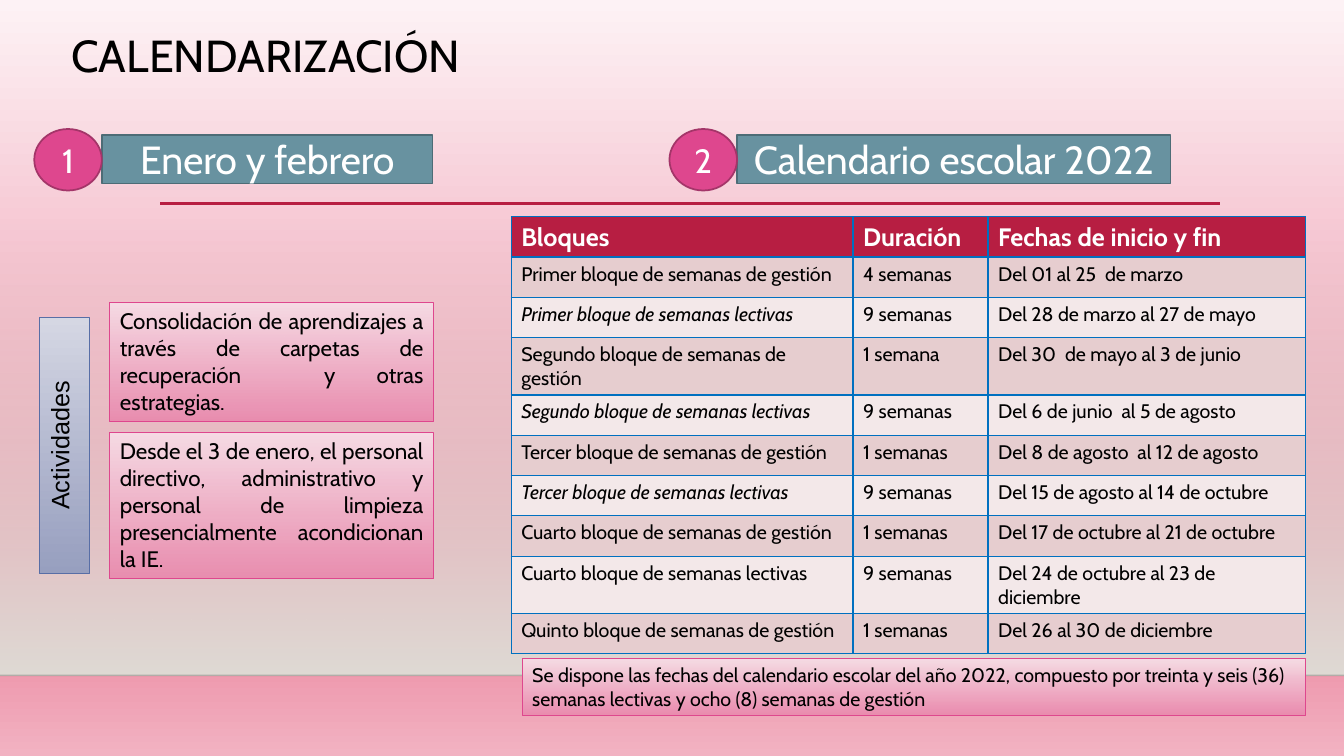
from lxml.etree import SubElement
from pptx import Presentation
from pptx.dml.color import RGBColor
from pptx.enum.shapes import MSO_CONNECTOR, MSO_SHAPE as SHAPE
from pptx.enum.text import MSO_ANCHOR as ANCHOR, PP_ALIGN as ALIGN
from pptx.oxml.ns import qn
from pptx.util import Inches, Pt

BLACK = RGBColor(0x00, 0x00, 0x00)
WHITE = RGBColor(0xFF, 0xFF, 0xFF)
CRIMSON = RGBColor(0xB7, 0x1E, 0x42)
PINK = RGBColor(0xDE, 0x47, 0x8E)
DARK_PINK = RGBColor(0xA4, 0x35, 0x69)
TEAL = RGBColor(0x68, 0x92, 0xA0)
DARK_TEAL = RGBColor(0x4D, 0x6C, 0x76)
INDIGO = RGBColor(0x58, 0x6E, 0xA6)
GRID_BLUE = RGBColor(0x00, 0x70, 0xC0)
ODD_ROW = RGBColor(0xE6, 0xCD, 0xCF)
EVEN_ROW = RGBColor(0xF3, 0xE8, 0xE9)
PALE_ROSE = RGBColor(0xFD, 0xF2, 0xF5)
ROSE = RGBColor(0xEC, 0x8C, 0xA3)
SOFT_ROSE = RGBColor(0xF2, 0xB2, 0xC2)
SAND = RGBColor(0xDF, 0xDB, 0xD5)

BACKDROP = [(0, PALE_ROSE, 100), (74, ROSE, 100), (83, ROSE, 100), (100, SOFT_ROSE, 100)]
WALL = [(0, SAND, 0), (100, SAND, 100)]
PINK_FADE = [(0, RGBColor(0xF7, 0xDC, 0xE5), 100), (100, RGBColor(0xEA, 0x8A, 0xAE), 92)]
INDIGO_FADE = [(0, RGBColor(0xD6, 0xD9, 0xE5), 100), (100, RGBColor(0x92, 0x9D, 0xC0), 92)]

HEADINGS = ["Bloques", "Duración", "Fechas de inicio y fin"]
BLOCKS = [
    ("Primer bloque de semanas de gestión", "4 semanas", "Del 01 al 25  de marzo"),
    ("Primer bloque de semanas lectivas", "9 semanas", "Del 28 de marzo al 27 de mayo"),
    ("Segundo bloque de semanas de gestión", "1 semana", "Del 30  de mayo al 3 de junio"),
    ("Segundo bloque de semanas lectivas", "9 semanas", "Del 6 de junio  al 5 de agosto"),
    ("Tercer bloque de semanas de gestión", "1 semanas", "Del 8 de agosto  al 12 de agosto"),
    ("Tercer bloque de semanas lectivas", "9 semanas", "Del 15 de agosto al 14 de octubre"),
    ("Cuarto bloque de semanas de gestión", "1 semanas", "Del 17 de octubre al 21 de octubre"),
    ("Cuarto bloque de semanas lectivas", "9 semanas", "Del 24 de octubre al 23 de diciembre"),
    ("Quinto bloque de semanas de gestión", "1 semanas", "Del 26 al 30 de diciembre"),
]
ITALIC_ROWS = (2, 4, 6)
COLUMN_WIDTHS = [3.39, 1.34, 3.15]
ROW_HEIGHT = 0.4


def add_color(parent, color, alpha=100):
    """Append a colour with an opacity in percent."""
    swatch = SubElement(parent, qn("a:srgbClr"), val=str(color))
    if alpha < 100:
        SubElement(swatch, qn("a:alpha"), val=str(alpha * 1000))


def paint_gradient(fill, owner, stops):
    """Fill the owner from top to bottom with the given stops."""
    fill.gradient()
    fill.gradient_angle = 270
    stop_list = next(owner.iter(qn("a:gsLst")))
    for old_stop in list(stop_list):
        stop_list.remove(old_stop)
    for position, color, alpha in stops:
        stop = SubElement(stop_list, qn("a:gs"), pos=str(position * 1000))
        add_color(stop, color, alpha)


def write(frame, text, size, color=BLACK, align=ALIGN.LEFT, font="Cabin", bold=False, italic=False):
    """Write one paragraph with one run in a text frame."""
    paragraph = frame.paragraphs[0]
    paragraph.alignment = align
    run = paragraph.add_run()
    run.text = text
    run.font.name = font
    run.font.size = Pt(size)
    run.font.bold = bold
    run.font.italic = italic
    run.font.color.rgb = color
    return paragraph


def add_panel(slide, area, fill, edge=None, width=0.75, shape=SHAPE.RECTANGLE, anchor=ANCHOR.TOP):
    """Add a plain or gradient panel and return its text frame."""
    panel = slide.shapes.add_shape(shape, *map(Inches, area))
    panel.shadow.inherit = False
    if isinstance(fill, list):
        paint_gradient(panel.fill, panel.element, fill)
    else:
        panel.fill.solid()
        panel.fill.fore_color.rgb = fill
    if edge is None:
        panel.line.fill.background()
    else:
        panel.line.color.rgb = edge
        panel.line.width = Pt(width)
    panel.text_frame.word_wrap = True
    panel.text_frame.vertical_anchor = anchor
    return panel.text_frame


def add_rule(slide, left, right, y, color, width, alpha=100):
    """Add a horizontal rule."""
    rule = slide.shapes.add_connector(
        MSO_CONNECTOR.STRAIGHT, Inches(left), Inches(y), Inches(right), Inches(y))
    rule.line.width = Pt(width)
    rule.line.color.rgb = color
    paint = next(rule.element.spPr.iter(qn("a:solidFill")))
    paint.remove(paint[0])
    add_color(paint, color, alpha)
    SubElement(rule.element.spPr, qn("a:effectLst"))


def add_title(slide, text):
    """Add the slide title."""
    frame = slide.shapes.add_textbox(*map(Inches, (0.61, 0.29, 10.5, 1.15))).text_frame
    frame.word_wrap = True
    write(frame, text, 32).line_spacing = 0.9


def add_section(slide, left, number, heading, width):
    """Add a numbered section heading."""
    banner = add_panel(slide, (left + 0.67, 1.34, width, 0.48), TEAL, DARK_TEAL, 1.25,
                       anchor=ANCHOR.MIDDLE)
    write(banner, heading, 28, WHITE, ALIGN.CENTER)
    badge = add_panel(slide, (left, 1.28, 0.67, 0.61), PINK, DARK_PINK, 1.25,
                      SHAPE.OVAL, ANCHOR.MIDDLE)
    write(badge, number, 24, WHITE, ALIGN.CENTER)


def add_note(slide, area, text, size, align):
    """Add a pink note."""
    write(add_panel(slide, area, PINK_FADE, PINK), text, size, align=align)


def add_activities_label(slide):
    """Add the label that reads upwards beside the activities."""
    label = add_panel(slide, (0.39, 3.15, 0.5, 2.54), INDIGO_FADE, INDIGO)
    label._txBody.bodyPr.set("vert", "vert270")
    write(label, "Actividades", 18, align=ALIGN.CENTER, font="Arial")


def style_cell(cell, fill):
    """Set the fill and the borders of a cell."""
    properties = cell._tc.get_or_add_tcPr()
    for side in ("lnL", "lnR", "lnT", "lnB"):
        border = SubElement(properties, qn(f"a:{side}"), w=str(Pt(1)))
        add_color(SubElement(border, qn("a:solidFill")), GRID_BLUE)
    cell.fill.solid()
    cell.fill.fore_color.rgb = fill


def add_calendar(slide):
    """Add the table of school blocks."""
    rows = [HEADINGS, *BLOCKS]
    area = (5.07, 2.15, sum(COLUMN_WIDTHS), ROW_HEIGHT * len(rows))
    calendar = slide.shapes.add_table(len(rows), len(HEADINGS), *map(Inches, area)).table
    for column, width in zip(calendar.columns, COLUMN_WIDTHS):
        column.width = Inches(width)
    for r, row in enumerate(rows):
        calendar.rows[r].height = Inches(ROW_HEIGHT)
        for c, text in enumerate(row):
            cell = calendar.cell(r, c)
            if r == 0:
                style_cell(cell, CRIMSON)
                write(cell.text_frame, text, 18, WHITE, bold=True)
            else:
                style_cell(cell, ODD_ROW if r % 2 else EVEN_ROW)
                write(cell.text_frame, text, 14, italic=c == 0 and r in ITALIC_ROWS)


def main():
    """Build the calendar slide."""
    deck = Presentation()
    deck.slide_width, deck.slide_height = Inches(13.33), Inches(7.5)
    slide = deck.slides.add_slide(deck.slide_layouts[6])
    paint_gradient(slide.background.fill, slide.element, BACKDROP)
    add_panel(slide, (0, 2.21, 13.33, 4.49), WALL)
    add_rule(slide, 0, 13.33, 6.7, BLACK, 1, 20)
    add_rule(slide, 1.59, 12.1, 2.02, CRIMSON, 2.5)
    add_title(slide, "CALENDARIZACIÓN")
    add_section(slide, 6.64, "2", "Calendario escolar 2022", 4.3)
    add_section(slide, 0.34, "1", "Enero y febrero", 3.28)
    add_note(slide, (1.09, 4.29, 3.21, 1.45),
             "Desde el 3 de enero, el personal directivo, administrativo y personal de limpieza "
             "presencialmente acondicionan la IE.", 16, ALIGN.JUSTIFY)
    add_activities_label(slide)
    add_note(slide, (5.18, 6.53, 7.77, 0.57),
             "Se dispone las fechas del calendario escolar del año 2022, compuesto por treinta y "
             "seis (36) semanas lectivas y ocho (8) semanas de gestión", 14, ALIGN.LEFT)
    add_calendar(slide)
    add_note(slide, (1.09, 3, 3.21, 1.18),
             "Consolidación de aprendizajes a través de carpetas de recuperación  y otras "
             "estrategias.", 16, ALIGN.JUSTIFY)
    deck.save("out.pptx")


if __name__ == "__main__":
    main()
